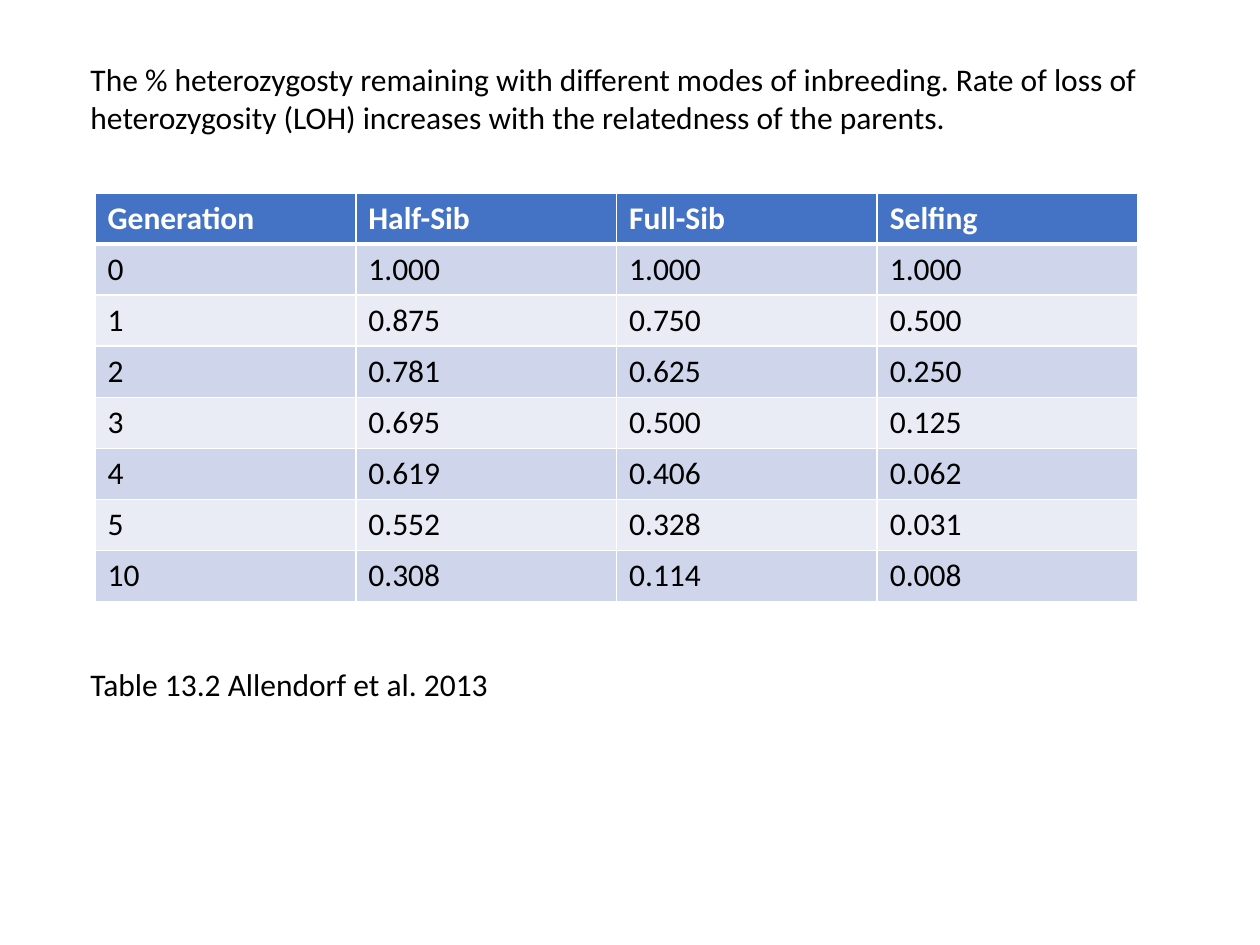
"""Build a slide tabulating the heterozygosity left under three modes of inbreeding."""
import lxml.etree
import pptx
import pptx.dml.color
import pptx.oxml.ns
import pptx.util

Pt = pptx.util.Pt

COLORS = {
    "text": "000000",
    "header": "4472C4",
    "header_text": "FFFFFF",
    "border": "FFFFFF",
    "odd_row": "CFD5EA",
    "even_row": "E9EBF5",
}

EXPLANATION = (
    "The % heterozygosty remaining with different modes of inbreeding. "
    "Rate of loss of heterozygosity (LOH) increases with the relatedness of the parents."
)
CITATION = "Table 13.2 Allendorf et al. 2013"

HETEROZYGOSITY = [
    ("Generation", "Half-Sib", "Full-Sib", "Selfing"),
    ("0", "1.000", "1.000", "1.000"),
    ("1", "0.875", "0.750", "0.500"),
    ("2", "0.781", "0.625", "0.250"),
    ("3", "0.695", "0.500", "0.125"),
    ("4", "0.619", "0.406", "0.062"),
    ("5", "0.552", "0.328", "0.031"),
    ("10", "0.308", "0.114", "0.008"),
]


def rgb(name):
    return pptx.dml.color.RGBColor.from_string(COLORS[name])


class SlideBuilder:
    """Holds the text style and the slide being filled."""

    def __init__(self, slide, font="Calibri", size=18):
        self.slide = slide
        self.font = font
        self.size = size

    def style(self, paragraph, color="text", bold=False):
        paragraph.font.name = self.font
        paragraph.font.size = Pt(self.size)
        paragraph.font.bold = bold
        paragraph.font.color.rgb = rgb(color)

    def text(self, left, top, width, height, paragraphs, gap):
        frame = self.slide.shapes.add_textbox(
            Pt(left), Pt(top), Pt(width), Pt(height)
        ).text_frame
        frame.word_wrap = True
        for index, wording in enumerate(paragraphs):
            paragraph = frame.add_paragraph() if index else frame.paragraphs[0]
            paragraph.text = wording
            paragraph.space_before = Pt(gap if index else 0)
            self.style(paragraph)

    def borders(self, cell, top, bottom):
        properties = cell._tc.get_or_add_tcPr()
        for side, weight in (("L", 1), ("R", 1), ("T", top), ("B", bottom)):
            line = lxml.etree.SubElement(
                properties, pptx.oxml.ns.qn(f"a:ln{side}"), w=str(Pt(weight))
            )
            fill = lxml.etree.SubElement(line, pptx.oxml.ns.qn("a:solidFill"))
            lxml.etree.SubElement(
                fill, pptx.oxml.ns.qn("a:srgbClr"), val=COLORS["border"]
            )

    def table(self, left, top, column_width, row_height, rows):
        columns = len(rows[0])
        table = self.slide.shapes.add_table(
            len(rows), columns, Pt(left), Pt(top),
            Pt(column_width * columns), Pt(row_height * len(rows)),
        ).table
        for row_index, values in enumerate(rows):
            is_header = row_index == 0
            band = "header" if is_header else "odd_row" if row_index % 2 else "even_row"
            table.rows[row_index].height = Pt(row_height)
            for column_index, value in enumerate(values):
                cell = table.cell(row_index, column_index)
                cell.text = value
                self.borders(cell, 3 if row_index == 1 else 1, 3 if is_header else 1)
                cell.fill.solid()
                cell.fill.fore_color.rgb = rgb(band)
                self.style(
                    cell.text_frame.paragraphs[0],
                    "header_text" if is_header else "text",
                    is_header,
                )


def main():
    presentation = pptx.Presentation()
    presentation.slide_width = Pt(720)
    presentation.slide_height = Pt(540)
    blank_layout = presentation.slide_layouts[6]
    builder = SlideBuilder(presentation.slides.add_slide(blank_layout))
    builder.text(44.64, 31, 630.7, 378, [EXPLANATION, CITATION], gap=302)
    builder.table(54.3, 110.2, 149, 29.2, HETEROZYGOSITY)
    presentation.save("out.pptx")


if __name__ == "__main__":
    main()
